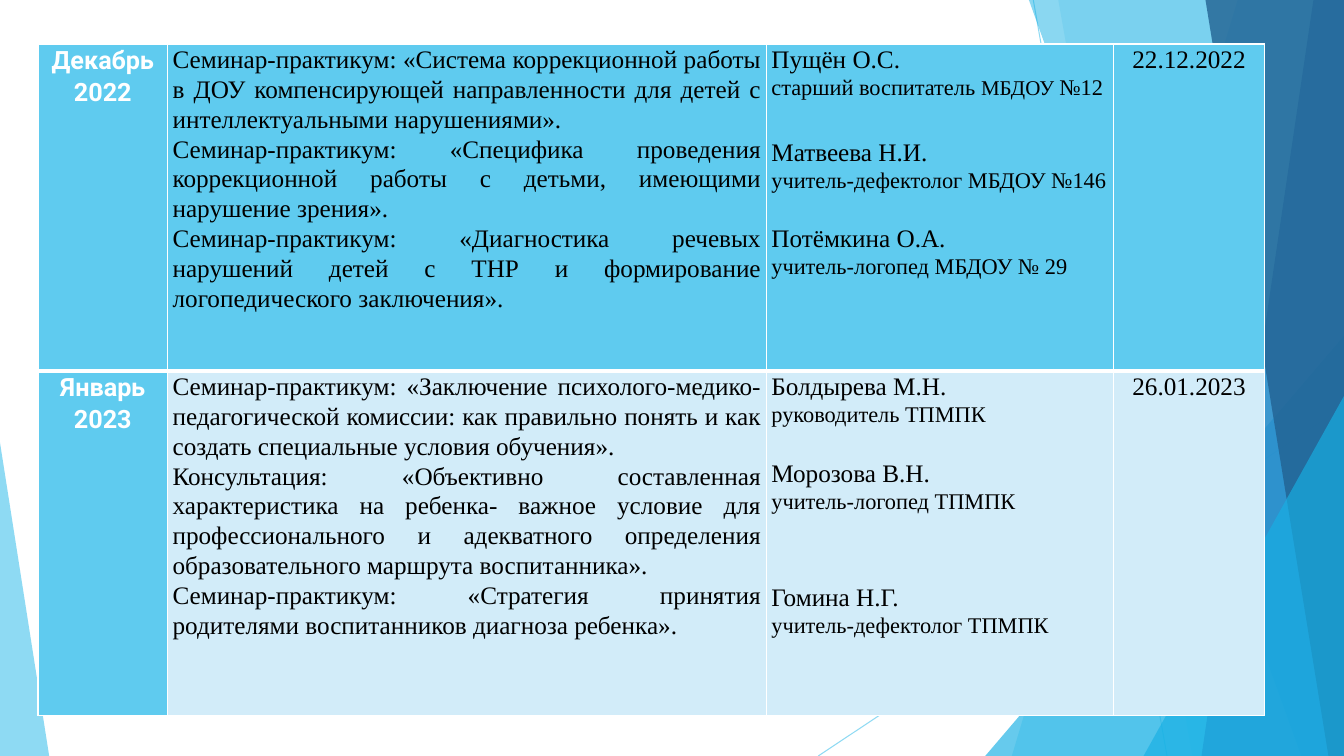
from lxml.etree import SubElement
from pptx import Presentation
from pptx.dml.color import RGBColor
from pptx.enum.shapes import MSO_CONNECTOR, MSO_SHAPE
from pptx.enum.text import PP_ALIGN
from pptx.oxml import parse_xml
from pptx.oxml.ns import nsdecls, qn
from pptx.util import Cm, Pt

WIDTH, HEIGHT = 33.87, 19.05
COLORS = {
    "sky": "5FCBEF", "cyan": "17B0E4", "blue": "2E83C3", "navy": "226292",
    "pale": "D2ECF9", "white": "FFFFFF", "black": "000000",
}
BODY_FONT, MONTH_FONT = "Times New Roman", "Roboto"

# Facets, back to front: (top-left x, bottom-left x, colour, opacity %),
# or a corner triangle (width, height, colour, opacity %)
BACK_FACETS = [(31.19, 25.5, "sky", 36), (26.67, 30.05, "sky", 20)]
LARGE_TRIANGLE = (9.04, 10.59, "cyan", 66)
FRONT_FACETS = [(25.93, 32.79, "cyan", 50), (33.1, 30.28, "blue", 70),
                (30.38, 33.48, "navy", 80)]
SMALL_TRIANGLE = (5.05, 9.07, "cyan", 66)
LEFT_TRIANGLE = (1.24, 7.9, "sky", 70)

# Timetable: each speaker is (gap above in points, name, runs of the position)
COLUMNS = [3.26, 15.09, 8.75, 3.81]
ROWS = [8.24, 8.68]
TIMETABLE = [
    {
        "month": "Декабрь 2022",
        "fill": "sky",
        "topics": [
            # A no-break space keeps the preposition with its noun
            "Семинар-практикум: «Система коррекционной работы в ДОУ компенсирующей "
            "направленности для детей с интеллектуальными нарушениями».",
            "Семинар-практикум: «Специфика проведения коррекционной работы с детьми, "
            "имеющими нарушение зрения».",
            "Семинар-практикум: «Диагностика речевых нарушений детей с ТНР и "
            "формирование логопедического заключения».",
        ],
        "speakers": [
            (0, "Пущён О.С.", [("старший воспитатель ", 16), ("МБДОУ ", 15), ("№12", 16)]),
            (26, "Матвеева Н.И.", [("учитель-дефектолог МБДОУ №146", 16)]),
            (21.5, "Потёмкина О.А.", [("учитель-логопед МБДОУ № 29", 16)]),
        ],
        "date": "22.12.2022",
    },
    {
        "month": "Январь 2023",
        "fill": "pale",
        "topics": [
            "Семинар-практикум: «Заключение психолого-медико-педагогической комиссии: "
            "как правильно понять и как создать специальные условия обучения».",
            "Консультация: «Объективно составленная характеристика на ребенка- важное "
            "условие для профессионального и адекватного определения образовательного "
            "маршрута воспитанника».",
            "Семинар-практикум: «Стратегия принятия родителями воспитанников диагноза "
            "ребенка».",
        ],
        "speakers": [
            (0, "Болдырева М.Н.", [("руководитель ТПМПК", 16)]),
            (21.5, "Морозова В.Н.", [("учитель-логопед ТПМПК", 16)]),
            (48.5, "Гомина Н.Г.", [("учитель-дефектолог ТПМПК", 16)]),
        ],
        "date": "26.01.2023",
    },
]


def color(name):
    return RGBColor.from_string(COLORS[name])


def set_opacity(element, percent):
    hex_color = next(element.iter(qn("a:srgbClr")))
    SubElement(hex_color, qn("a:alpha")).set("val", str(percent * 1000))


def paint(shape, fill, opacity):
    shape.shadow.inherit = False
    shape.fill.solid()
    shape.fill.fore_color.rgb = color(fill)
    set_opacity(shape.fill._xPr, opacity)
    shape.line.fill.background()


def add_thin_line(slide, start, end):
    line = slide.shapes.add_connector(
        MSO_CONNECTOR.STRAIGHT, *[Cm(value) for value in start + end])
    line.line.color.rgb = color("sky")
    line.line.width = Pt(0.75)
    properties = line._element.spPr
    set_opacity(properties, 70)
    SubElement(properties, qn("a:effectLst"))


def add_facet(slide, right, bottom, top_x, bottom_x, fill, opacity):
    builder = slide.shapes.build_freeform(Cm(top_x), Cm(0))
    builder.add_line_segments(
        [(Cm(right), Cm(0)), (Cm(right), Cm(bottom)), (Cm(bottom_x), Cm(bottom))])
    paint(builder.convert_to_shape(), fill, opacity)


def add_triangle(slide, left, bottom, apex, width, height, fill, opacity):
    triangle = slide.shapes.add_shape(
        MSO_SHAPE.ISOSCELES_TRIANGLE,
        Cm(left), Cm(bottom - height), Cm(width), Cm(height))
    triangle.adjustments[0] = apex
    paint(triangle, fill, opacity)


def add_background(slide, width, height):
    add_thin_line(slide, (26.04, 0), (29.41, height))
    add_thin_line(slide, (width, 10.24), (20.62, height))
    for facet in BACK_FACETS:
        add_facet(slide, width, height, *facet)
    add_triangle(slide, width - LARGE_TRIANGLE[0], height, 1, *LARGE_TRIANGLE)
    for facet in FRONT_FACETS:
        add_facet(slide, width, height, *facet)
    add_triangle(slide, width - SMALL_TRIANGLE[0], height, 1, *SMALL_TRIANGLE)
    add_triangle(slide, 0, height, 0, *LEFT_TRIANGLE)


def style_cell(cell, fill, top, bottom):
    cell.margin_left = cell.margin_right = Cm(0.13)
    cell.margin_top = cell.margin_bottom = Cm(0)
    cell.fill.solid()
    cell.fill.fore_color.rgb = color(fill)
    # Borders stand before the fill
    borders = [("lnL", 1), ("lnR", 1), ("lnT", top), ("lnB", bottom)]
    for index, (tag, points) in enumerate(borders):
        cell._tc.get_or_add_tcPr().insert(index, parse_xml(
            f'<a:{tag} {nsdecls("a")} w="{Pt(points)}"><a:solidFill>'
            f'<a:srgbClr val="{COLORS["white"]}"/></a:solidFill></a:{tag}>'))


def write_cell(cell, paragraphs, alignment, font=BODY_FONT, ink="black", bold=False):
    """Each paragraph is (gap above, [(text, size), ...])."""
    frame = cell.text_frame
    frame.text = "\n".join("" for _ in paragraphs)
    for paragraph, (gap, runs) in zip(frame.paragraphs, paragraphs):
        paragraph.alignment = alignment
        paragraph.line_spacing = 1.07
        paragraph.space_before = Pt(gap)
        for text, size in runs:
            run = paragraph.add_run()
            run.text = text
            run.font.name = font
            run.font.size = Pt(size)
            run.font.bold = bold
            run.font.color.rgb = color(ink)


def add_timetable(slide, left, top):
    table = slide.shapes.add_table(
        len(ROWS), len(COLUMNS), Cm(left), Cm(top),
        Cm(sum(COLUMNS)), Cm(sum(ROWS))).table
    table.first_row = table.horz_banding = False
    for column, width in zip(table.columns, COLUMNS):
        column.width = Cm(width)
    for index, (row, height, entry) in enumerate(zip(table.rows, ROWS, TIMETABLE)):
        row.height = Cm(height)
        month, topics, speakers, date = row.cells
        fills = ["sky"] + [entry["fill"]] * 3
        for cell, fill in zip((month, topics, speakers, date), fills):
            style_cell(cell, fill, top=3 if index else 1, bottom=1 if index else 3)
        people = []
        for gap, name, position in entry["speakers"]:
            people += [(gap, [(name, 18)]), (0, position)]
        write_cell(month, [(0, [(entry["month"], 18)])], PP_ALIGN.CENTER,
                   MONTH_FONT, "white", True)
        write_cell(topics, [(0, [(topic, 18)]) for topic in entry["topics"]],
                   PP_ALIGN.JUSTIFY)
        write_cell(speakers, people, PP_ALIGN.LEFT)
        write_cell(date, [(0, [(entry["date"], 18)])], PP_ALIGN.CENTER)


def main():
    presentation = Presentation()
    presentation.slide_width, presentation.slide_height = Cm(WIDTH), Cm(HEIGHT)
    slide = presentation.slides.add_slide(presentation.slide_layouts[6])
    add_background(slide, WIDTH, HEIGHT)
    add_timetable(slide, 0.96, 1.11)
    presentation.save("out.pptx")


if __name__ == "__main__":
    main()
